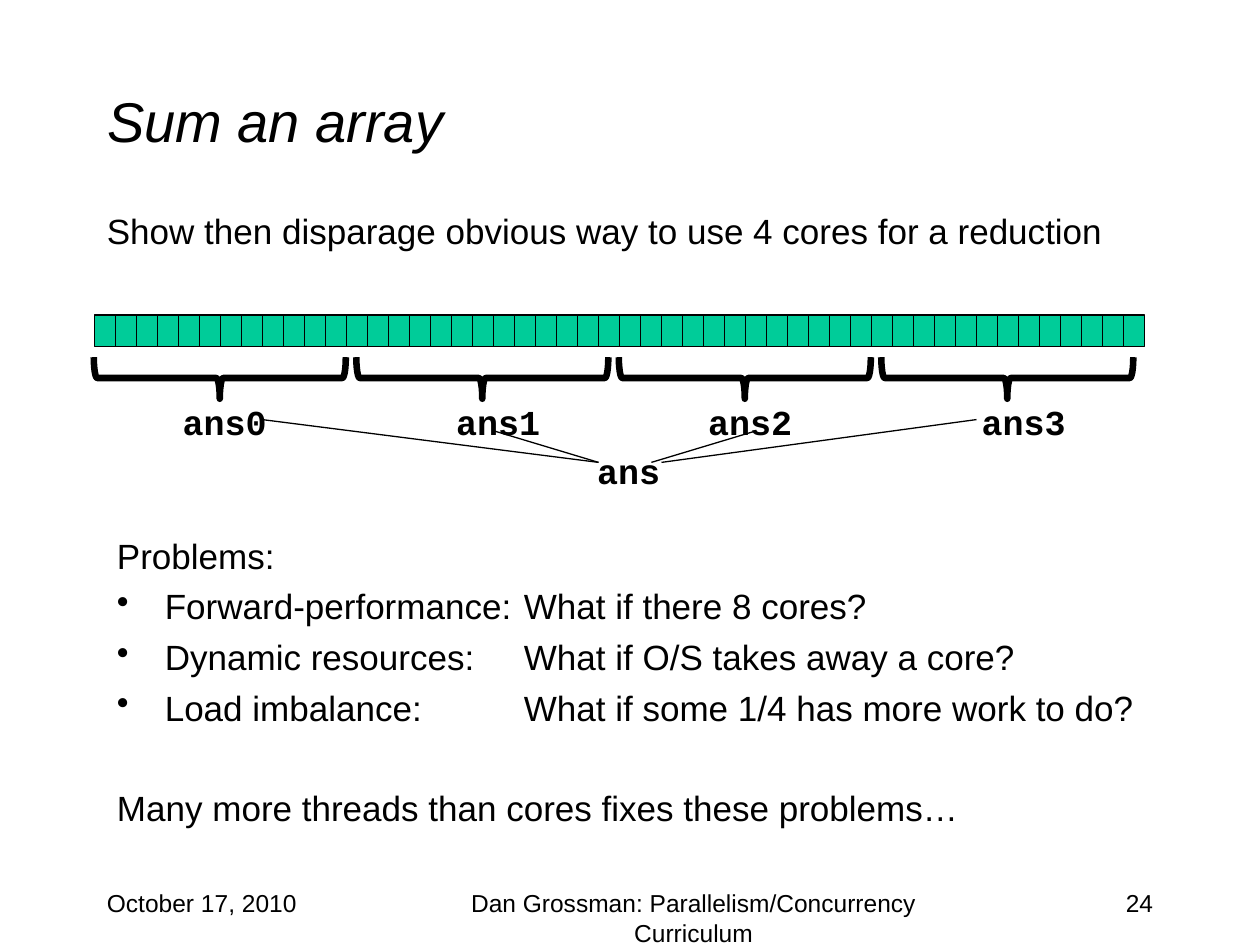
from lxml import etree
from pptx import Presentation
from pptx.dml.color import RGBColor
from pptx.enum.shapes import MSO_CONNECTOR, MSO_SHAPE
from pptx.enum.text import MSO_ANCHOR, PP_ALIGN
from pptx.oxml.ns import qn
from pptx.util import Inches, Pt

RECT, BRACE = MSO_SHAPE.RECTANGLE, MSO_SHAPE.LEFT_BRACE
STRAIGHT = MSO_CONNECTOR.STRAIGHT
LEFT, CENTER, RIGHT = PP_ALIGN.LEFT, PP_ALIGN.CENTER, PP_ALIGN.RIGHT
MIDDLE = MSO_ANCHOR.MIDDLE
BLACK = RGBColor(0, 0, 0)
GREEN = RGBColor(0x00, 0xCC, 0x99)


def style(para, size, align=LEFT, face="Arial"):
    para.alignment = align
    font = para.font
    font.name, font.size, font.color.rgb = face, Pt(size), BLACK


def add_text(box, text, size, align=LEFT, face="Arial"):
    shape = slide.shapes.add_textbox(*[Inches(v) for v in box])
    frame = shape.text_frame
    frame.word_wrap = True
    frame.text = text
    for para in frame.paragraphs:
        style(para, size, align, face)
    return frame


deck = Presentation()
deck.slide_width, deck.slide_height = Inches(10), Inches(7.5)
slide = deck.slides.add_slide(deck.slide_layouts[5])

title = slide.shapes.title
title.left, title.top = Inches(0.75), Inches(0.33)
title.width, title.height = Inches(8.5), Inches(1.25)
title.text_frame.text = "Sum an array"
title.text_frame.vertical_anchor = MIDDLE
style(title.text_frame.paragraphs[0], 32)
title.text_frame.paragraphs[0].font.italic = True

add_text((0.75, 1.61, 8.5, 0.64),
         "Show then disparage obvious way to use 4 cores for a reduction", 20)
add_text((0.75, 7, 2.08, 0.5), "October 17, 2010", 14)
add_text((7.17, 7, 2.08, 0.5), "24", 14, RIGHT)
add_text((3.17, 7, 4.67, 0.5),
         "Dan Grossman: Parallelism/Concurrency Curriculum", 14, CENTER)

for i in range(50):
    cell = slide.shapes.add_shape(
        RECT, Inches(0.75 + i / 6), Inches(2.5), Inches(1 / 6), Inches(0.25))
    cell.shadow.inherit = False
    cell.fill.solid()
    cell.fill.fore_color.rgb = GREEN
    cell.line.color.rgb = BLACK
    cell.line.width = Pt(0.75)

for i in range(4):
    brace = slide.shapes.add_shape(
        BRACE, Inches(1.58 + i * 25 / 12), Inches(2), Inches(0.33), Inches(2))
    brace.rotation = 270
    brace.shadow.inherit = False
    brace.fill.background()
    brace.line.color.rgb = BLACK
    brace.line.width = Pt(3.75)

labels = [("ans0", 1.45, 3.18), ("ans1", 3.62, 3.18), ("ans2", 5.62, 3.18),
          ("ans3", 7.79, 3.18), ("ans", 4.74, 3.57)]
for name, x, y in labels:
    frame = add_text((x, y, 0.8, 0.32), name, 20, LEFT, "Courier New")
    frame.margin_left = frame.margin_right = 0
    frame.margin_top = frame.margin_bottom = 0
    frame.paragraphs[0].font.bold = True

links = [(2.08, 3.33, 4.75), (3.92, 3.42, 4.75),
         (6, 3.42, 5.17), (7.75, 3.33, 5.25)]
for x, y, end in links:
    link = slide.shapes.add_connector(
        STRAIGHT, Inches(x), Inches(y), Inches(end), Inches(3.67))
    link.line.color.rgb = BLACK
    link.line.width = Pt(0.75)
    etree.SubElement(link._element.spPr, qn("a:effectLst"))

lines = ["Problems:",
         "Forward-performance:\tWhat if there 8 cores?",
         "Dynamic resources:\tWhat if O/S takes away a core?",
         "Load imbalance:\tWhat if some 1/4 has more work to do?",
         "Many more threads than cores fixes these problems…"]
frame = add_text((0.83, 4.19, 8.5, 2.65), "\n".join(lines), 20)
for para in frame.paragraphs[1:4]:
    para.space_before = Pt(5)
    props = para._p.get_or_add_pPr()
    props.set("marL", str(Inches(0.38)))
    props.set("indent", str(-Inches(0.38)))
    bullet = etree.Element(qn("a:buChar"), char="•")
    tabs = etree.Element(qn("a:tabLst"))
    etree.SubElement(tabs, qn("a:tab"), pos=str(Inches(3.23)), algn="l")
    mark = props.find(qn("a:defRPr"))
    mark.addprevious(bullet)
    mark.addprevious(tabs)
frame.paragraphs[4].space_before = Pt(33)

deck.save("out.pptx")
